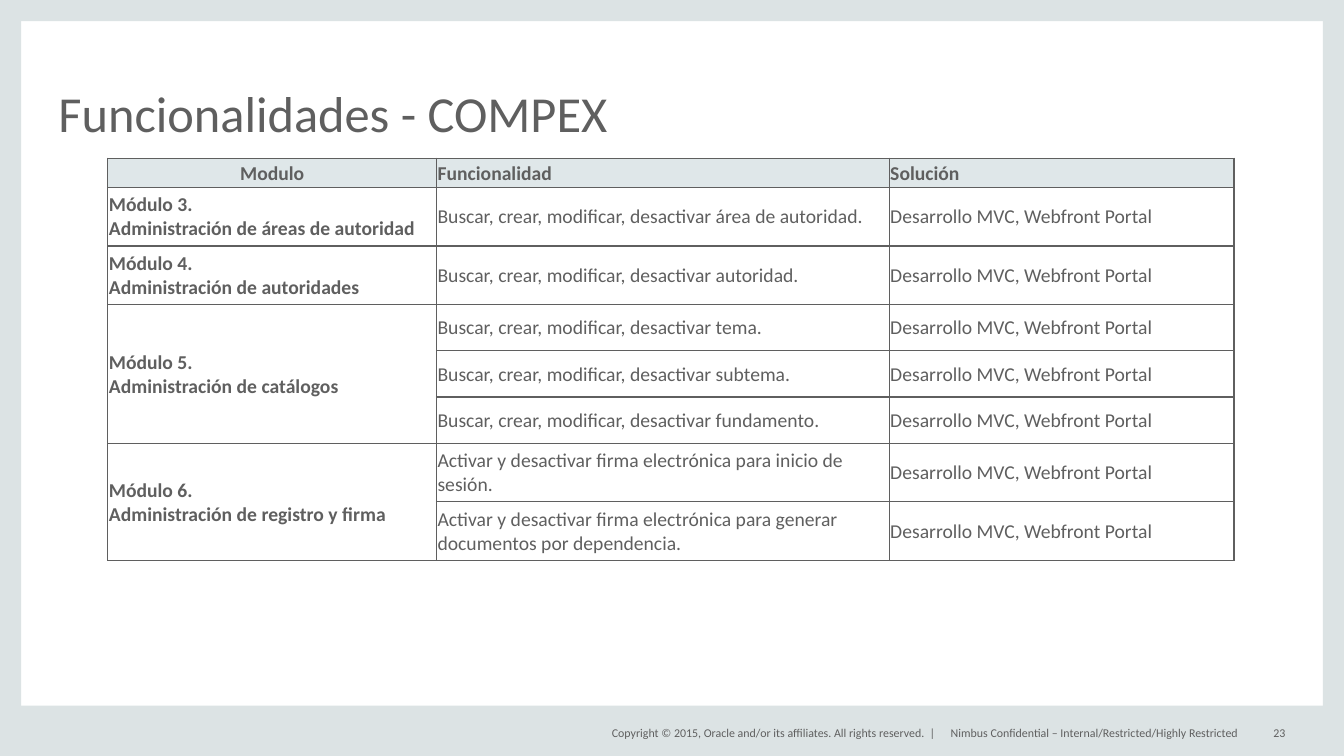
import pptx
import pptx.dml.color
import pptx.enum.shapes
import pptx.enum.text
import pptx.oxml.ns
import pptx.util
from lxml import etree

Inches = pptx.util.Inches
Pt = pptx.util.Pt
RGBColor = pptx.dml.color.RGBColor
ALIGN = pptx.enum.text.PP_ALIGN
ANCHOR = pptx.enum.text.MSO_ANCHOR

FONT = "Calibri"
GRAY = RGBColor(0x5F, 0x5F, 0x5F)
FRAME = RGBColor(0xDC, 0xE3, 0xE4)
HEADER = RGBColor(0xDF, 0xE7, 0xE9)

WIDTH, HEIGHT = 13.33, 7.5
EDGE, FOOTER_TOP = 0.21, 7
COLUMN_WIDTHS = (3.26, 4.49, 3.42)
ROW_HEIGHTS = (0.29, 0.58, 0.58, 0.46, 0.46, 0.46, 0.58, 0.58)
HEADINGS = ("Modulo", "Funcionalidad", "Solución")
SOLUTION = "Desarrollo MVC, Webfront Portal"
MODULES = (
    ("Módulo 3.", "Administración de áreas de autoridad",
     ("Buscar, crear, modificar, desactivar área de autoridad.",)),
    ("Módulo 4.", "Administración de autoridades",
     ("Buscar, crear, modificar, desactivar autoridad.",)),
    ("Módulo 5.", "Administración de catálogos",
     ("Buscar, crear, modificar, desactivar tema.",
      "Buscar, crear, modificar, desactivar subtema.",
      "Buscar, crear, modificar, desactivar fundamento.")),
    ("Módulo 6.", "Administración de registro y firma",
     ("Activar y desactivar firma electrónica para inicio de sesión.",
      "Activar y desactivar firma electrónica para generar documentos por dependencia.")),
)


def add_run(paragraph, text, size, bold=False):
    run = paragraph.add_run()
    run.text = text
    run.font.name = FONT
    run.font.size = Pt(size)
    run.font.bold = bold
    run.font.color.rgb = GRAY


def add_band(slide, left, top, width, height):
    shape = slide.shapes.add_shape(
        pptx.enum.shapes.MSO_SHAPE.RECTANGLE,
        Inches(left), Inches(top), Inches(width), Inches(height))
    shape.shadow.inherit = False
    shape.fill.solid()
    shape.fill.fore_color.rgb = FRAME
    shape.line.fill.background()


def add_text(slide, box, text, size, align=ALIGN.LEFT, anchor=ANCHOR.MIDDLE,
             wrap=False, spacing=None):
    shape = slide.shapes.add_textbox(*map(Inches, box))
    frame = shape.text_frame
    frame.margin_left = frame.margin_right = frame.margin_top = frame.margin_bottom = 0
    frame.word_wrap = wrap
    frame.vertical_anchor = anchor
    paragraph = frame.paragraphs[0]
    paragraph.alignment = align
    paragraph.line_spacing = spacing
    add_run(paragraph, text, size)


def add_borders(cell):
    properties = cell._tc.get_or_add_tcPr()
    for side in ("lnL", "lnR", "lnT", "lnB"):
        line = etree.SubElement(properties, pptx.oxml.ns.qn(f"a:{side}"), w=str(Pt(1)))
        fill = etree.SubElement(line, pptx.oxml.ns.qn("a:solidFill"))
        etree.SubElement(fill, pptx.oxml.ns.qn("a:srgbClr"), val=str(GRAY))


def fill_cell(cell, lines, bold=False, align=ALIGN.LEFT):
    cell.margin_left = cell.margin_right = cell.margin_top = Inches(0.01)
    cell.margin_bottom = 0
    cell.vertical_anchor = ANCHOR.MIDDLE
    paragraph = cell.text_frame.paragraphs[0]
    paragraph.alignment = align
    for index, line in enumerate(lines):
        if index:
            paragraph.add_line_break()
        add_run(paragraph, line, 14, bold)


def add_module_table(slide):
    table = slide.shapes.add_table(
        len(ROW_HEIGHTS), len(COLUMN_WIDTHS), Inches(1.07), Inches(1.57),
        Inches(sum(COLUMN_WIDTHS)), Inches(sum(ROW_HEIGHTS))).table
    table.first_row = table.horz_banding = False
    for column, width in zip(table.columns, COLUMN_WIDTHS):
        column.width = Inches(width)
    for row, height in zip(table.rows, ROW_HEIGHTS):
        row.height = Inches(height)
    for cell in table.iter_cells():
        add_borders(cell)
        cell.fill.background()

    for index, heading in enumerate(HEADINGS):
        cell = table.cell(0, index)
        cell.fill.solid()
        cell.fill.fore_color.rgb = HEADER
        fill_cell(cell, [heading], True, ALIGN.LEFT if index else ALIGN.CENTER)

    first = 1
    for number, name, features in MODULES:
        last = first + len(features) - 1
        if last > first:
            table.cell(first, 0).merge(table.cell(last, 0))
        fill_cell(table.cell(first, 0), [number, name], True)
        for row, feature in enumerate(features, first):
            fill_cell(table.cell(row, 1), [feature])
            fill_cell(table.cell(row, 2), [SOLUTION])
        first = last + 1


def main():
    presentation = pptx.Presentation()
    presentation.slide_width = Inches(WIDTH)
    presentation.slide_height = Inches(HEIGHT)
    slide = presentation.slides.add_slide(presentation.slide_layouts[6])

    add_band(slide, 0, 0, EDGE, HEIGHT)
    add_band(slide, WIDTH - EDGE, 0, EDGE, HEIGHT)
    add_band(slide, 0, FOOTER_TOP, WIDTH, HEIGHT - FOOTER_TOP)
    add_band(slide, 0, 0, WIDTH, EDGE)

    add_text(slide, (0.58, 0.44, 12.17, 0.97), "Funcionalidades - COMPEX", 36,
             anchor=ANCHOR.BOTTOM, wrap=True, spacing=0.8)
    add_text(slide, (5.88, 7.17, 3.4, 0.2),
             "Copyright © 2015, Oracle and/or its affiliates. All rights reserved.  |",
             8.5, ALIGN.RIGHT)
    add_text(slide, (9.43, 7.17, 3, 0.2),
             "Nimbus Confidential – Internal/Restricted/Highly Restricted", 8.5)
    add_text(slide, (12.33, 7.17, 0.42, 0.2), "23", 8.5, ALIGN.RIGHT)
    add_module_table(slide)

    presentation.save("out.pptx")


if __name__ == "__main__":
    main()
